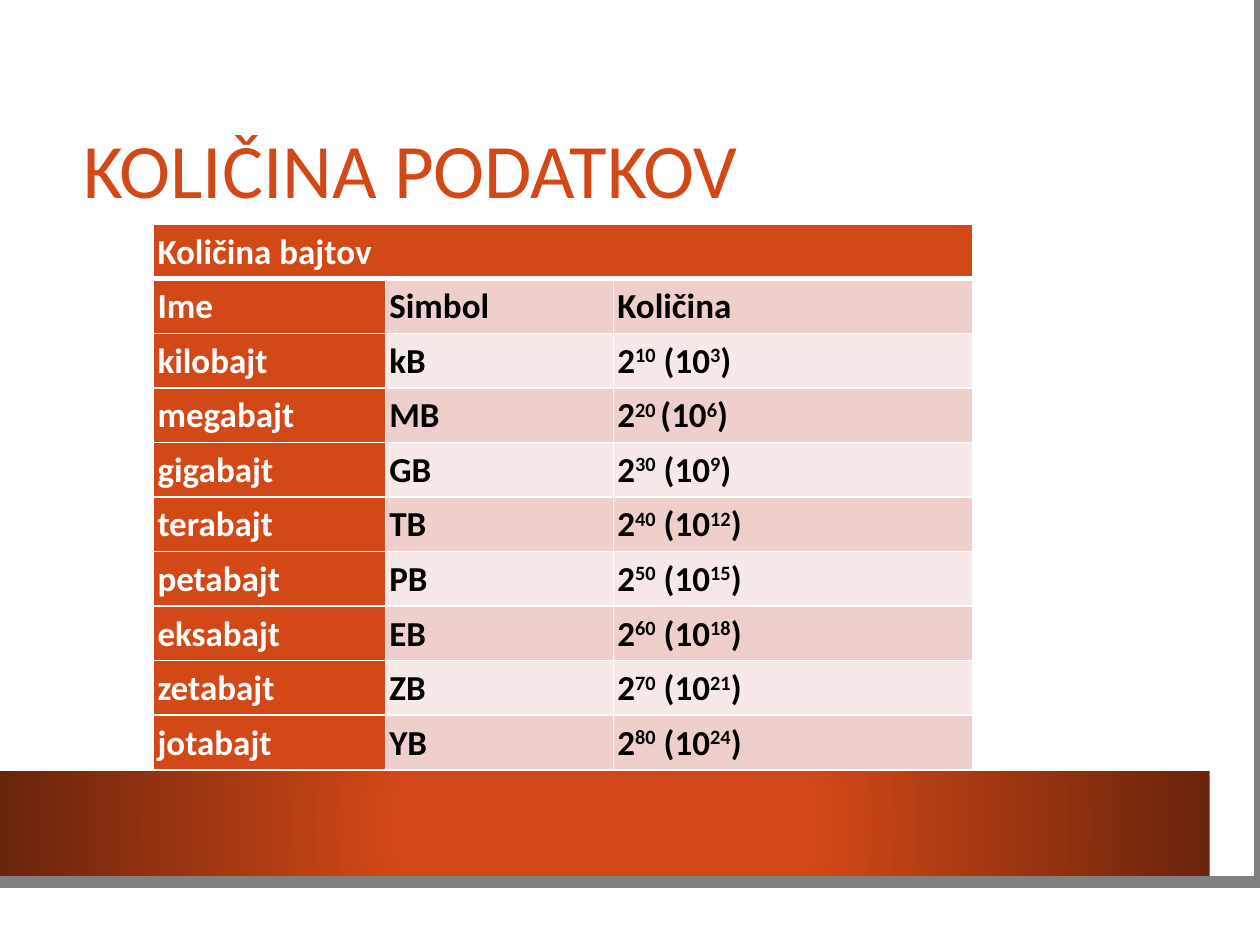
from lxml.etree import SubElement
from pptx import Presentation
from pptx.dml.color import RGBColor
from pptx.enum.shapes import MSO_SHAPE
from pptx.enum.text import MSO_ANCHOR, PP_ALIGN
from pptx.oxml import parse_xml
from pptx.oxml.ns import nsdecls, qn
from pptx.util import Inches, Pt

# Content: text between carets is superscript
TITLE = "KOLIČINA PODATKOV"
HEADING = "Količina bajtov"
ROWS = [
    ("Ime", "Simbol", "Količina"),
    ("kilobajt", "kB", "2^10^ (10^3^)"),
    ("megabajt", "MB", "2^20 ^(10^6^)"),
    ("gigabajt", "GB", "2^30^ (10^9^)"),
    ("terabajt", "TB", "2^40^ (10^12^)"),
    ("petabajt", "PB", "2^50^ (10^15^)"),
    ("eksabajt", "EB", "2^60^ (10^18^)"),
    ("zetabajt", "ZB", "2^70^ (10^21^)"),
    ("jotabajt", "YB", "2^80^ (10^24^)"),
]

# Format
ACCENT, DARK, GREY, WHITE, BLACK = "D34817", "69240C", "808080", "FFFFFF", "000000"
BANDS = ("EFCFCC", "F7E9E8")
COLS = (1.84, 1.81, 2.85)
ROW_H = 0.433
TITLE_FONT = {"name": "Calibri", "size": Pt(44), "bold": False}
CELL_FONT = {"name": "Calibri", "size": Pt(20), "bold": True}
CELL_PARA = {"line_spacing": 1.07, "space_after": Pt(8)}
MARGINS = {f"margin_{side}": Inches(0.03) for side in ("left", "right", "top", "bottom")}


def rgb(value):
    return RGBColor.from_string(value)


def apply(obj, values):
    for name, value in values.items():
        setattr(obj, name, value)


def add_rect(s, left, top, width, height):
    sp = s.shapes.add_shape(MSO_SHAPE.RECTANGLE, *map(Inches, (left, top, width, height)))
    sp.shadow.inherit = False
    sp.line.fill.background()
    sp.fill.solid()
    sp.fill.fore_color.rgb = rgb(WHITE)
    return sp


def add_frame(s):
    # White page, gradient band and grey edge
    add_rect(s, 0, 0, 9.83, 7.27)
    band = add_rect(s, 0, 6.12, 9.6, 0.85)
    stops = "".join(
        f'<a:gs pos="{pos}000"><a:srgbClr val="{color}"/></a:gs>'
        for pos, color in ((34, ACCENT), (100, DARK)))
    gradient = parse_xml(
        f'<a:gradFill {nsdecls("a")}><a:gsLst>{stops}</a:gsLst><a:path path="circle">'
        '<a:fillToRect l="50000" t="50000" r="50000" b="50000"/></a:path></a:gradFill>')
    solid = band.element.spPr.find(qn("a:solidFill"))
    solid.getparent().replace(solid, gradient)

    fb = s.shapes.build_freeform(9.6, 0, scale=Inches(1))
    fb.add_line_segments([(9.62, 7.02), (-0.02, 7.01)], close=False)
    edge = fb.convert_to_shape()
    edge.shadow.inherit = False
    edge.fill.background()
    edge.line.color.rgb = rgb(GREY)
    edge.line.width = Pt(6.5)


def add_title(s):
    title = s.shapes.title
    s.shapes.element.append(title.element)  # bring in front of the frame
    apply(title, dict(zip(("left", "top", "width", "height"),
                          map(Inches, (0.56, 0.75, 8.53, 1.26)))))
    tf = title.text_frame
    tf.text = TITLE
    tf.vertical_anchor = MSO_ANCHOR.MIDDLE
    p = tf.paragraphs[0]
    apply(p, {"alignment": PP_ALIGN.LEFT, "line_spacing": 0.9})
    apply(p.runs[0].font, TITLE_FONT)
    p.runs[0].font.color.rgb = rgb(ACCENT)


def format_cell(cell, fill, top, bottom):
    apply(cell, MARGINS)
    tcPr = cell._tc.get_or_add_tcPr()
    for side, width in (("L", 1), ("R", 1), ("T", top), ("B", bottom)):
        ln = SubElement(tcPr, qn(f"a:ln{side}"), w=str(Pt(width)))
        SubElement(SubElement(ln, qn("a:solidFill")), qn("a:srgbClr"), val=WHITE)
    cell.fill.solid()
    cell.fill.fore_color.rgb = rgb(fill)


def write_cell(cell, text, color):
    p = cell.text_frame.paragraphs[0]
    apply(p, CELL_PARA)
    for i, part in enumerate(text.split("^")):
        r = p.add_run()
        r.text = part
        apply(r.font, CELL_FONT)
        r.font.color.rgb = rgb(color)
        if i % 2:
            r.font._element.set("baseline", "30000")


def add_units_table(s):
    rows = [(HEADING, "", "")] + ROWS
    table = s.shapes.add_table(
        len(rows), len(COLS), Inches(1.22), Inches(1.78),
        Inches(sum(COLS)), Inches(ROW_H * len(rows))).table
    for column, width in zip(table.columns, COLS):
        column.width = Inches(width)
    for i, texts in enumerate(rows):
        table.rows[i].height = Inches(ROW_H)
        for j, text in enumerate(texts):
            header = i == 0 or j == 0
            cell = table.cell(i, j)
            format_cell(cell, ACCENT if header else BANDS[(i - 1) % 2],
                        top=3 if i == 1 else 1, bottom=3 if i == 0 else 1)
            if text:
                write_cell(cell, text, WHITE if header else BLACK)
    table.cell(0, 0).merge(table.cell(0, len(COLS) - 1))


def main():
    prs = Presentation()
    prs.slide_width, prs.slide_height = Inches(10), Inches(7.5)
    s = prs.slides.add_slide(prs.slide_layouts[5])
    add_frame(s)
    add_title(s)
    add_units_table(s)
    prs.save("out.pptx")


if __name__ == "__main__":
    main()
